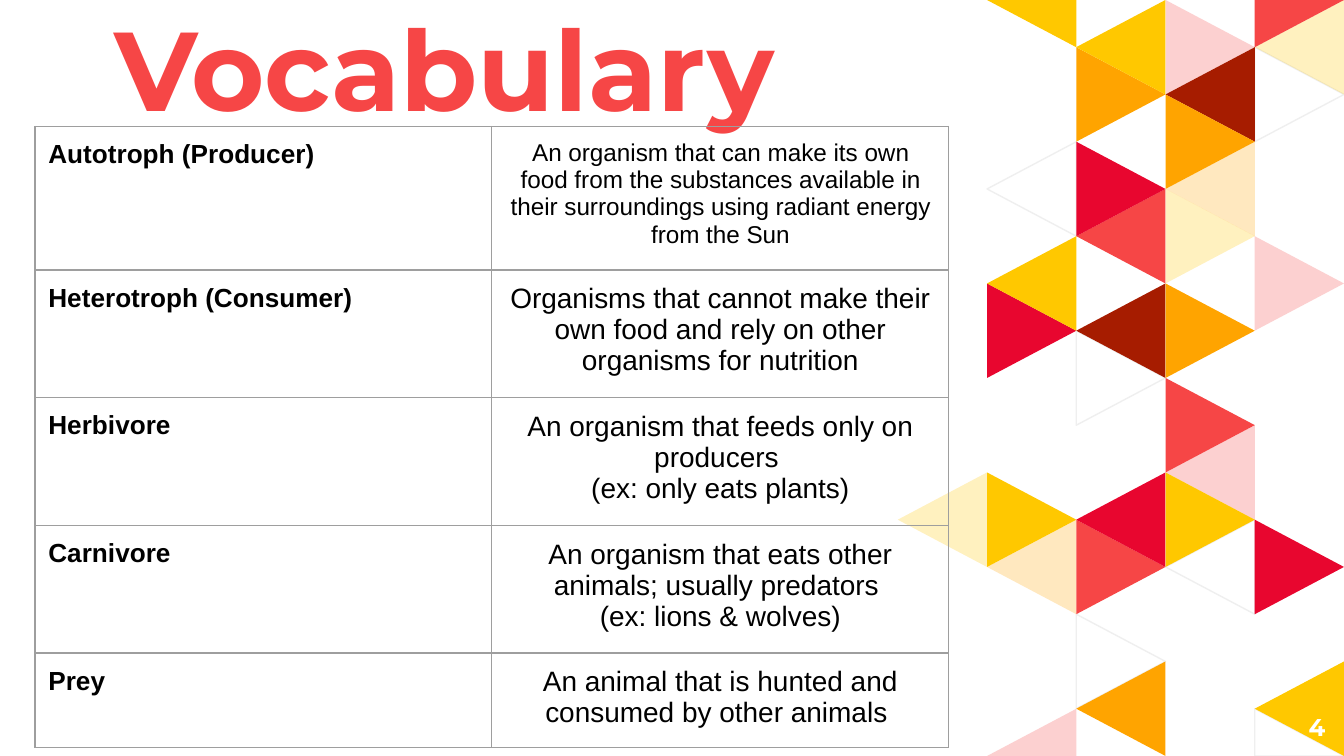
from lxml.etree import SubElement
from pptx import Presentation
from pptx.dml.color import RGBColor
from pptx.enum.text import MSO_ANCHOR, PP_ALIGN
from pptx.oxml.ns import qn
from pptx.util import Inches, Pt

WIDTH = 10
HEIGHT = WIDTH * 9 / 16
GRID_LEFT, COLS, BANDS = 6.68, 5, 16
COL_W, BAND_H = (WIDTH - GRID_LEFT) / COLS, HEIGHT / BANDS
ROW_H = 0.42
INSET = Inches(0.1)

COLORS = {
    "white": "FFFFFF",
    "black": "000000",
    "outline": "EFEFEF",
    "border": "9E9E9E",
    "coral": "F64646",
    "red": "E8062F",
    "brown": "A61C00",
    "orange": "FFA400",
    "yellow": "FFC800",
}

TRIANGLES = [
    ("white", 100, [(1, 3), (2, 7), (2, 13), (3, 11), (4, 1), (4, 15)]),
    ("coral", 25, [(1, 15), (3, 0), (3, 9), (4, 5)]),
    ("orange", 25, [(1, 11), (3, 3)]),
    ("yellow", 25, [(0, 10), (3, 4), (4, 0)]),
    ("coral", 100, [(2, 4), (2, 11), (3, 8), (4, -1)]),
    ("red", 100, [(1, 6), (2, 3), (2, 10), (4, 11)]),
    ("brown", 100, [(2, 6), (3, 1)]),
    ("orange", 100, [(2, 1), (2, 14), (3, 2), (3, 6)]),
    ("yellow", 100, [(1, -1), (1, 5), (1, 10), (2, 0), (3, 10), (4, 14)]),
]

VOCABULARY = [
    ("Autotroph (Producer)", "An organism that can make its own food from the substances "
     "available in their surroundings using radiant energy from the Sun", 13),
    ("Heterotroph (Consumer)", "Organisms that cannot make their own food and rely on other "
     "organisms for nutrition", 15),
    ("Herbivore", "An organism that feeds only on producers \n(ex: only eats plants)", 15),
    ("Carnivore", "An organism that eats other animals; usually predators "
     "\v(ex: lions & wolves)", 15),
    ("Prey", "An animal that is hunted and consumed by other animals ", 15),
]


def rgb(name):
    """Return the named colour."""
    return RGBColor.from_string(COLORS[name])


def style_text(tf, font, size, color, bold, align):
    """Give every paragraph of a text frame one look."""
    for p in tf.paragraphs:
        p.alignment = align
        p.font.name = font
        p.font.size = Pt(size)
        p.font.bold = bold
        p.font.color.rgb = rgb(color)


def add_text(s, text, box, size, color, align, anchor):
    """Add a bold heading-font text box."""
    tf = s.shapes.add_textbox(*map(Inches, box)).text_frame
    tf.word_wrap = True
    tf.vertical_anchor = anchor
    tf.margin_left = tf.margin_right = tf.margin_top = tf.margin_bottom = INSET
    tf.text = text
    style_text(tf, "Montserrat", size, color, True, align)


def add_triangle(s, col, band, color, opacity):
    """Add a triangle that points right on odd places and left on even ones."""
    points_right = (col + band) % 2 == 1
    base, tip = (col, col + 1) if points_right else (col + 1, col)
    corners = [(base, band), (base, band + 2), (tip, band + 1)]
    points = [(Inches(GRID_LEFT + x * COL_W), Inches(min(max(y, 0), BANDS) * BAND_H))
              for x, y in corners]
    builder = s.shapes.build_freeform(*points[0])
    builder.add_line_segments(points[1:], close=True)
    sp = builder.convert_to_shape()
    sp.shadow.inherit = False
    sp.fill.solid()
    sp.fill.fore_color.rgb = rgb(color)
    if opacity < 100:
        clr = sp.fill._xPr.find(qn("a:solidFill"))[0]
        SubElement(clr, qn("a:alpha"), val=str(opacity * 1000))
    if color == "white":
        sp.line.color.rgb = rgb("outline")
        sp.line.width = Pt(0.75)
    else:
        sp.line.fill.background()


def add_borders(cell):
    """Draw a thin line on all four sides of a cell."""
    tcPr = cell._tc.get_or_add_tcPr()
    for side in ("lnL", "lnR", "lnT", "lnB"):
        ln = SubElement(tcPr, qn(f"a:{side}"), w=str(Pt(0.75)))
        fill = SubElement(ln, qn("a:solidFill"))
        SubElement(fill, qn("a:srgbClr"), val=COLORS["border"])


def fill_cell(cell, text, size, bold, align):
    """Write and format one table cell."""
    add_borders(cell)
    cell.fill.background()
    cell.margin_left = cell.margin_right = cell.margin_top = cell.margin_bottom = INSET
    cell.text = text
    style_text(cell.text_frame, "Arial", size, "black", bold, align)


def add_vocabulary(s):
    """Add the table of terms and definitions, whose rows grow to fit their text."""
    n = len(VOCABULARY)
    table = s.shapes.add_table(n, 2, Inches(0.26), Inches(0.94),
                               Inches(6.8), Inches(n * ROW_H)).table
    table.first_row = table.horz_banding = False
    for i, (term, definition, size) in enumerate(VOCABULARY):
        fill_cell(table.cell(i, 0), term, 14, True, PP_ALIGN.LEFT)
        fill_cell(table.cell(i, 1), definition, size, False, PP_ALIGN.CENTER)


def main():
    """Build the vocabulary slide."""
    prs = Presentation()
    prs.slide_width, prs.slide_height = Inches(WIDTH), Inches(HEIGHT)
    s = prs.slides.add_slide(prs.slide_layouts[6])
    for color, opacity, places in TRIANGLES:
        for col, band in places:
            add_triangle(s, col, band, color, opacity)
    add_text(s, "Vocabulary", (0.75, 0.06, 5.42, 1.04), 60, "coral",
             PP_ALIGN.LEFT, MSO_ANCHOR.BOTTOM)
    add_text(s, "4", (9.36, 5.19, 0.6, 0.43), 13, "white",
             PP_ALIGN.RIGHT, MSO_ANCHOR.MIDDLE)
    add_vocabulary(s)
    prs.save("out.pptx")


if __name__ == "__main__":
    main()
